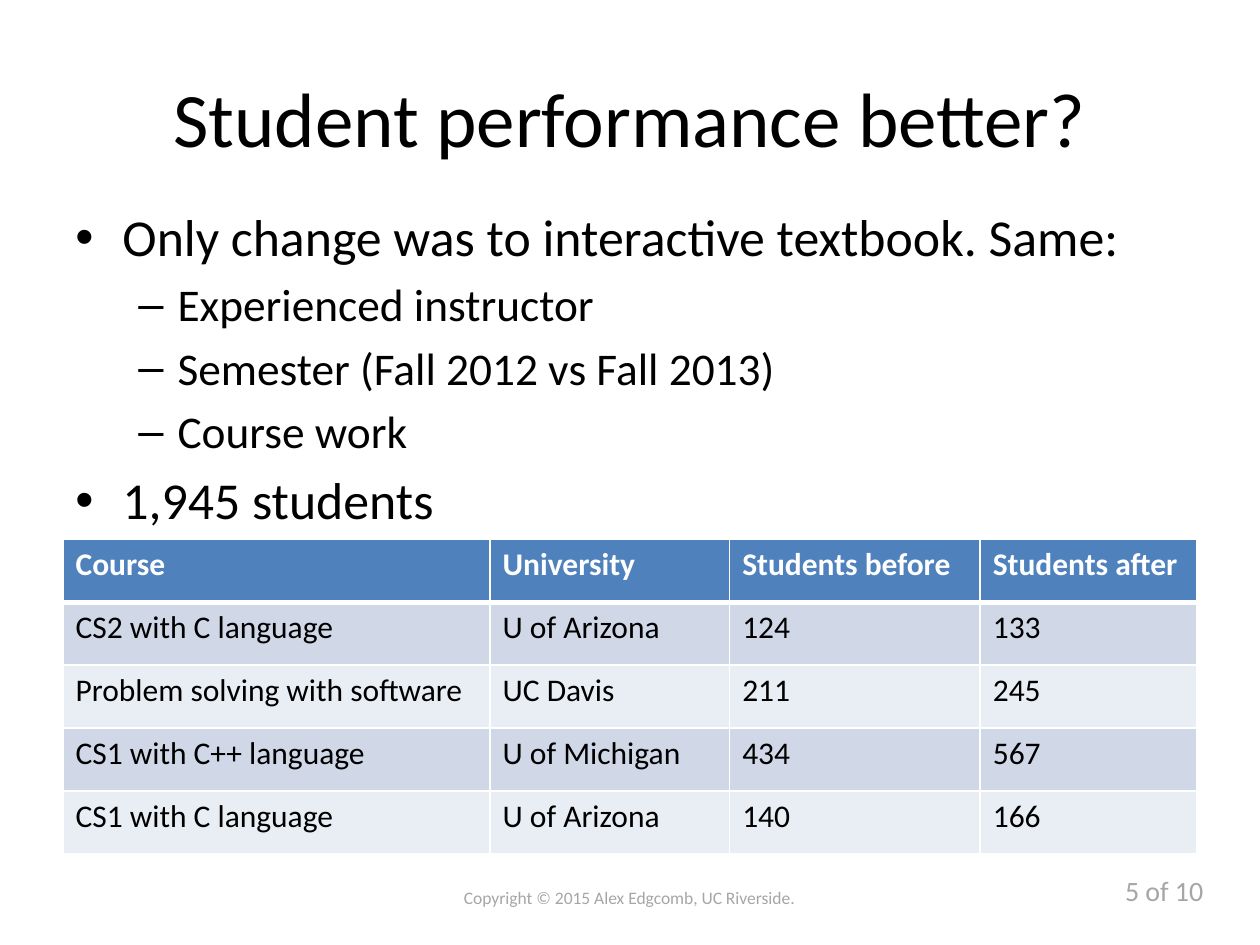
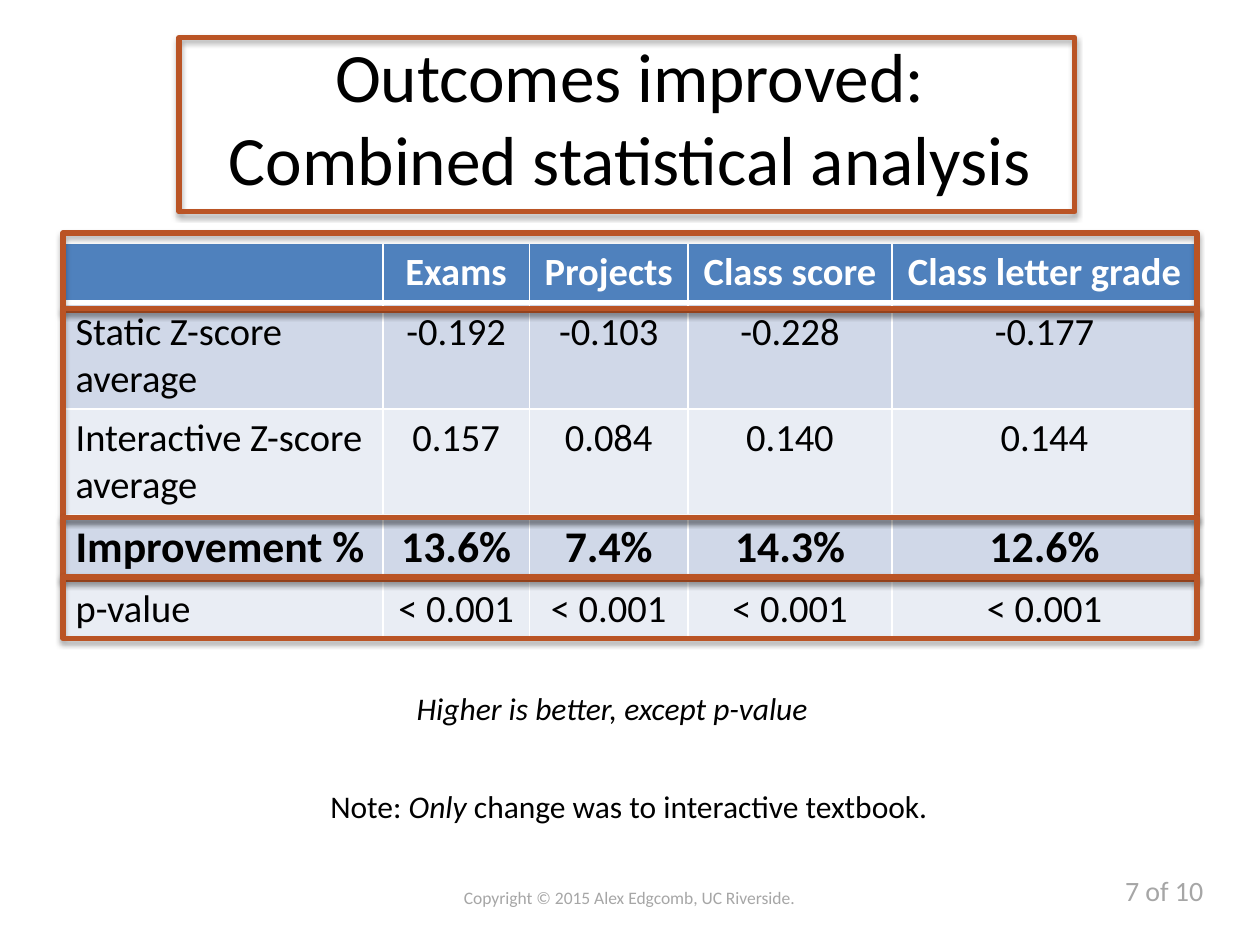
from lxml import etree
from pptx import Presentation
from pptx import util as u
from pptx.dml.color import RGBColor
from pptx.enum import shapes, text
from pptx.oxml import ns

COLORS = {
    "ink": "000000",
    "white": "FFFFFF",
    "muted": "A6A6A6",
    "header": "4F81BD",
    "band_dark": "D0D8E8",
    "band_light": "E9EDF4",
    "frame": "BA5425",
}
FONT = "Calibri"
MARGIN, CONTENT_WIDTH = 1.27, 22.86
CENTER, LEFT = text.PP_ALIGN.CENTER, text.PP_ALIGN.LEFT
BULLETS = [
    {"mark": "•", "size": 29.6, "left": 0.95, "hang": 0.95},
    {"mark": "–", "size": 25.9, "left": 2.06, "hang": 0.79},
]
COPYRIGHT = "Copyright © 2015 Alex Edgcomb, UC Riverside."
PAGE_COUNT = 10


def color(name):
    return RGBColor.from_string(COLORS[name])


def child(parent, tag, **attributes):
    values = {key: str(value) for key, value in attributes.items()}
    return etree.SubElement(parent, ns.qn(tag), values)


def apply(target, values):
    for name, value in values.items():
        setattr(target, name, value)


class Deck:
    def __init__(self):
        self.presentation = Presentation()
        apply(self.presentation, {"slide_width": u.Cm(25.4), "slide_height": u.Cm(19.05)})
        self.slide = None

    def new_slide(self, title, number):
        self.slide = self.presentation.slides.add_slide(self.presentation.slide_layouts[6])
        title_size = 39.6 if len(title) > 1 else 44
        frame = self.text_frame(MARGIN, 0.76, CONTENT_WIDTH, 3.18)
        frame.vertical_anchor = text.MSO_ANCHOR.MIDDLE
        paragraph = frame.paragraphs[0]
        paragraph.alignment = CENTER
        for index, line in enumerate(title):
            if index:
                paragraph.add_line_break()
            self.run(paragraph, line, title_size)
        self.text_box((22.43, 17.48, 2.11, 0.94), [f"{number} of {PAGE_COUNT}"],
                      16, "muted", wrap=False)
        self.text_box((9.04, 17.75, 7.29, 0.69), [COPYRIGHT],
                      10, "muted", CENTER, wrap=False)

    def text_frame(self, left, top, width, height, wrap=True):
        box = self.slide.shapes.add_textbox(*map(u.Cm, (left, top, width, height)))
        box.text_frame.word_wrap = wrap
        return box.text_frame

    def run(self, paragraph, content, size, ink="ink", **formats):
        run = paragraph.add_run()
        run.text = content
        apply(run.font, {"name": FONT, "size": u.Pt(size), **formats})
        run.font.color.rgb = color(ink)

    def text_box(self, place, parts, size, ink="ink", alignment=LEFT, wrap=True, italic=()):
        paragraph = self.text_frame(*place, wrap=wrap).paragraphs[0]
        paragraph.alignment = alignment
        for part in parts:
            self.run(paragraph, part, size, ink, italic=part in italic)

    def bullets(self, place, items):
        frame = self.text_frame(*place)
        for index, (level, content) in enumerate(items):
            style = BULLETS[level]
            paragraph = frame.add_paragraph() if index else frame.paragraphs[0]
            properties = paragraph._p.get_or_add_pPr()
            properties.set("marL", str(u.Cm(style["left"])))
            properties.set("indent", str(-u.Cm(style["hang"])))
            child(properties, "a:buFont", typeface="Arial")
            child(properties, "a:buChar", char=style["mark"])
            apply(paragraph, {"level": level,
                              "space_before": u.Pt(style["size"] * 0.2 if index else 0)})
            self.run(paragraph, content, style["size"])

    def borders(self, cell, row):
        weights = {"L": 1, "R": 1, "T": 3 if row == 1 else 1, "B": 3 if row == 0 else 1}
        properties = cell._tc.get_or_add_tcPr()
        for side, weight in weights.items():
            line = child(properties, f"a:ln{side}", w=u.Pt(weight))
            child(child(line, "a:solidFill"), "a:srgbClr", val=COLORS["white"])

    def table(self, top, widths, heights, rows, size, centered=False, emphasis=None):
        table = self.slide.shapes.add_table(
            len(rows), len(widths), u.Cm(MARGIN), u.Cm(top),
            u.Cm(sum(widths)), u.Cm(sum(heights))).table
        for column, width in zip(table.columns, widths):
            column.width = u.Cm(width)
        for row, (height, values) in enumerate(zip(heights, rows)):
            table.rows[row].height = u.Cm(height)
            fill = ("band_dark" if row % 2 else "band_light") if row else "header"
            row_size = 25 if row == emphasis else size
            for column, value in enumerate(values):
                cell = table.cell(row, column)
                self.borders(cell, row)
                cell.fill.solid()
                cell.fill.fore_color.rgb = color(fill)
                for index, line in enumerate(value.splitlines()):
                    frame = cell.text_frame
                    paragraph = frame.add_paragraph() if index else frame.paragraphs[0]
                    paragraph.alignment = CENTER if centered and column else LEFT
                    self.run(paragraph, line, row_size, "ink" if row else "white",
                             bold=row in (0, emphasis))

    def highlight(self, left, top, width, height):
        shape = self.slide.shapes.add_shape(
            shapes.MSO_SHAPE.RECTANGLE, *map(u.Cm, (left, top, width, height)))
        shape.fill.background()
        shape.line.color.rgb = color("frame")
        shape.line.width = u.Pt(3)
        shape.shadow.inherit = False
        effects = shape._element.spPr.find(ns.qn("a:effectLst"))
        shadow = child(effects, "a:outerShdw", blurRad=u.Pt(3.1), dist=u.Pt(1.8),
                       dir=5400000, rotWithShape=0)
        child(child(shadow, "a:srgbClr", val=COLORS["ink"]), "a:alpha", val=35000)


def performance_slide(deck):
    deck.new_slide(["Student performance better?"], 5)
    deck.bullets((MARGIN, 4.01, CONTENT_WIDTH, 6.53), [
        (0, "Only change was to interactive textbook. Same:"),
        (1, "Experienced instructor"),
        (1, "Semester (Fall 2012 vs Fall 2013)"),
        (1, "Course work"),
        (0, "1,945 students"),
    ])
    deck.table(10.87, [8.61, 4.83, 5.05, 4.37], [1.27] * 5, [
        ["Course", "University", "Students before", "Students after"],
        ["CS2 with C language", "U of Arizona", "124", "133"],
        ["Problem solving with software", "UC Davis", "211", "245"],
        ["CS1 with C++ language", "U of Michigan", "434", "567"],
        ["CS1 with C language", "U of Arizona", "140", "166"],
    ], 18)


def outcomes_slide(deck):
    deck.new_slide(["Outcomes improved:", "Combined statistical analysis"], 7)
    deck.table(4.9, [6.45, 2.95, 3.2, 4.11, 6.15], [1.2, 2.14, 2.14, 1.26, 1.2], [
        ["", "Exams", "Projects", "Class score", "Class letter grade"],
        ["Static Z-score\naverage", "-0.192", "-0.103", "-0.228", "-0.177"],
        ["Interactive Z-score\naverage", "0.157", "0.084", "0.140", "0.144"],
        ["Improvement %", "13.6%", "7.4%", "14.3%", "12.6%"],
        ["p-value"] + ["< 0.001"] * 4,
    ], 22, centered=True, emphasis=3)
    deck.text_box((8.15, 13.77, 8.81, 1.02), ["Higher is better, except p-value"], 18,
                  wrap=False, italic=["Higher is better, except p-value"])
    deck.text_box((1.96, 15.75, 21.44, 1.02),
                  ["Note: ", "Only", " change was to interactive textbook."], 18,
                  alignment=CENTER, italic=["Only"])
    deck.highlight(3.61, 0.76, 18.06, 3.51)
    for top, height in [(4.7, 1.55), (6.22, 4.22), (10.44, 1.24), (11.63, 1.24)]:
        deck.highlight(MARGIN, top, CONTENT_WIDTH, height)


def main():
    deck = Deck()
    performance_slide(deck)
    outcomes_slide(deck)
    deck.presentation.save("out.pptx")


if __name__ == "__main__":
    main()
